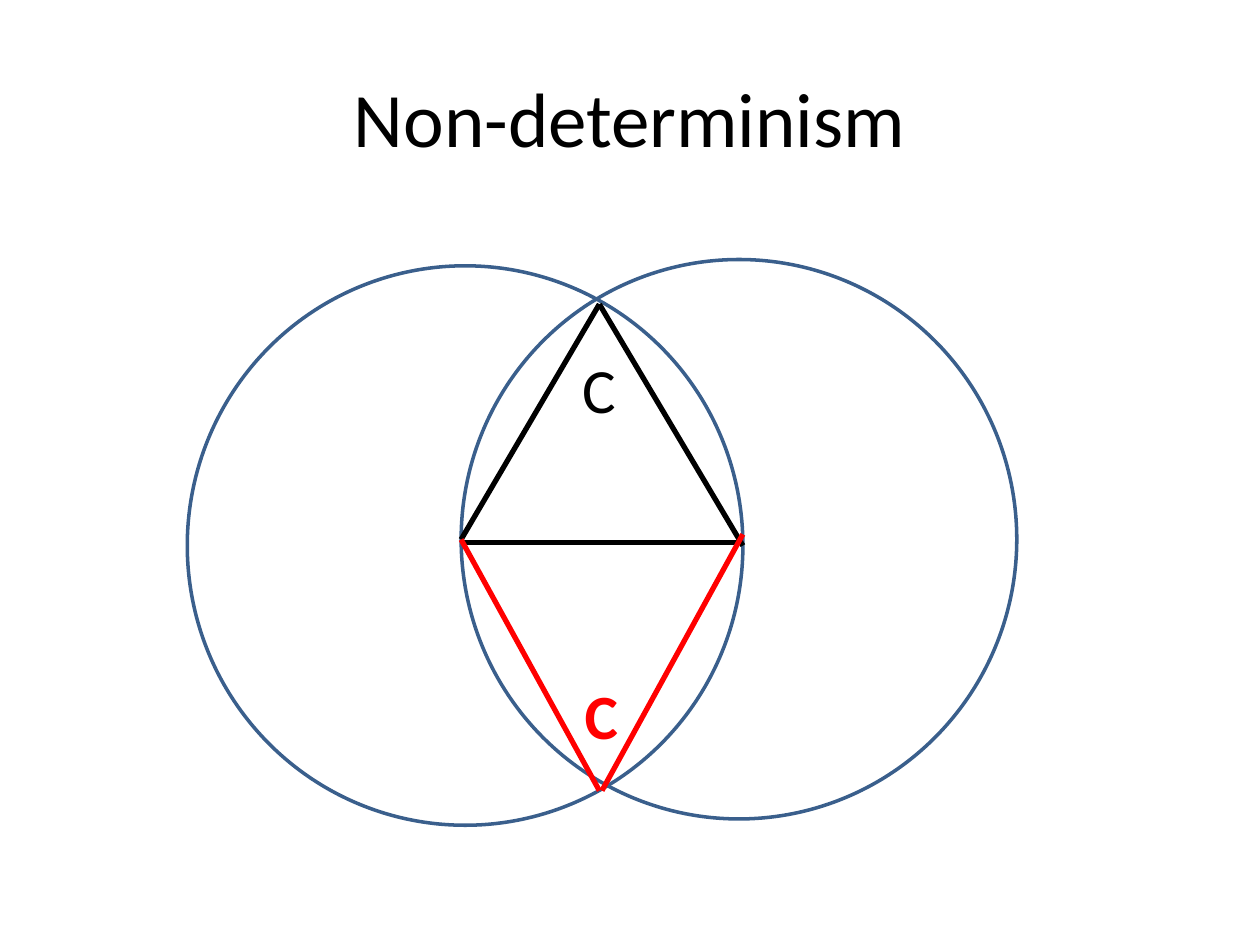
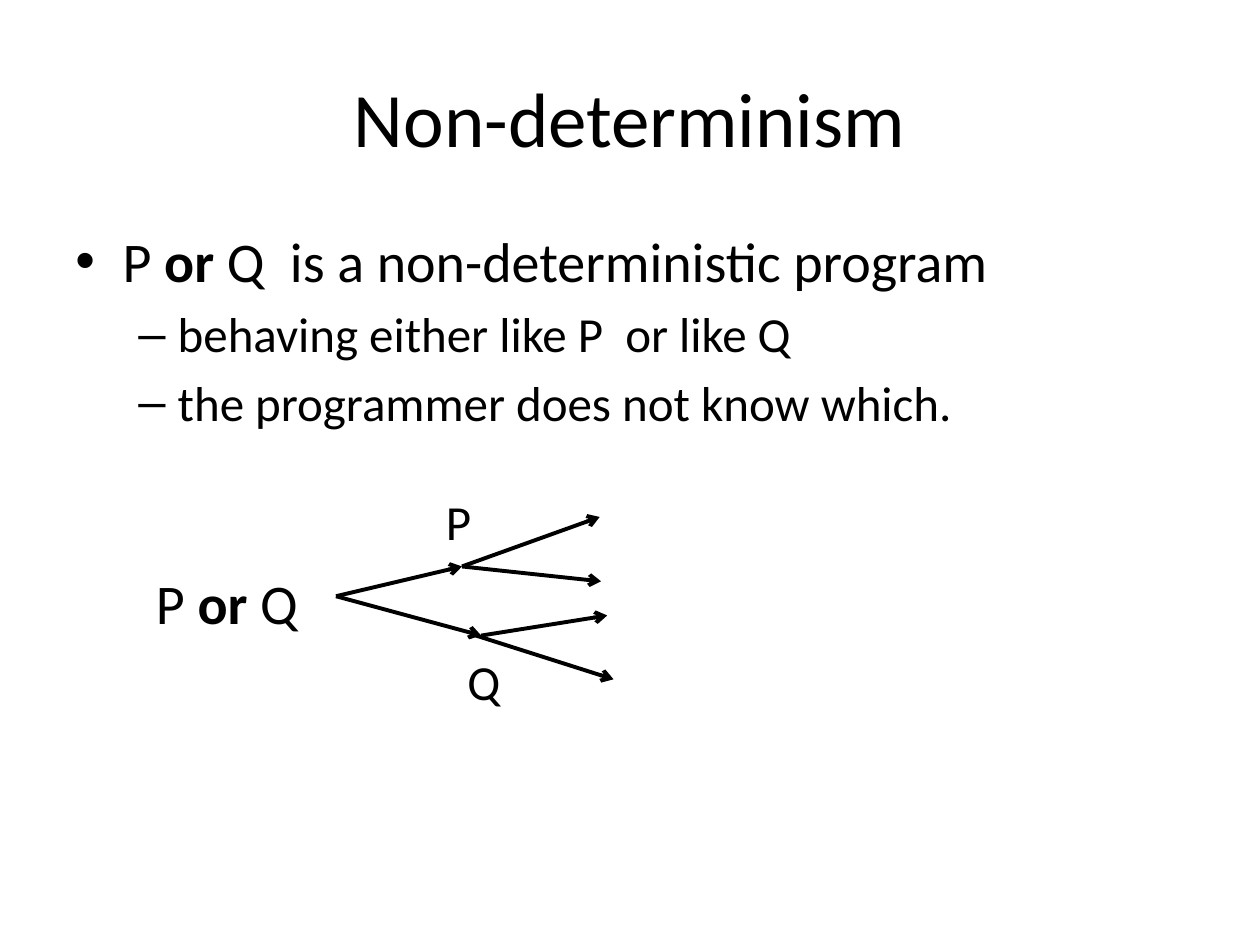
from lxml.etree import SubElement
from pptx import Presentation
from pptx.dml.color import RGBColor
from pptx.enum.shapes import MSO_CONNECTOR, MSO_SHAPE
from pptx.enum.text import MSO_ANCHOR, PP_ALIGN
from pptx.oxml.ns import qn
from pptx.util import Pt

FONT = "Calibri"
BLACK, RED, BLUE = "000000", "FF0000", "3A5F8C"
TITLE_ONLY = 5


def color(hex_string):
    return RGBColor.from_string(hex_string)


def style_paragraph(para, size, hex_color=BLACK, bold=None):
    para.font.name = FONT
    para.font.size = Pt(size)
    para.font.color.rgb = color(hex_color)
    para.font.bold = bold


def add_spans(para, spans):
    """Fill a paragraph with (text, bold) spans."""
    for text, bold in spans:
        span = para.add_run()
        span.text = text
        if bold:
            span.font.bold = True


def add_titled_page(deck, title):
    page = deck.slides.add_slide(deck.slide_layouts[TITLE_ONLY])
    box = page.shapes.title
    box.left, box.top, box.width, box.height = Pt(36), Pt(21.6), Pt(648), Pt(90)
    box.text_frame.text = title
    box.text_frame.vertical_anchor = MSO_ANCHOR.MIDDLE
    para = box.text_frame.paragraphs[0]
    para.alignment = PP_ALIGN.CENTER
    style_paragraph(para, 44)
    return page


def add_label(page, left, top, width, height, spans, size, hex_color=BLACK, bold=None):
    box = page.shapes.add_textbox(Pt(left), Pt(top), Pt(width), Pt(height))
    box.text_frame.word_wrap = False
    para = box.text_frame.paragraphs[0]
    style_paragraph(para, size, hex_color, bold)
    add_spans(para, spans)


def add_line(page, origin, start, end, width, hex_color=BLACK, arrow=False):
    """Draw a line between two points given relative to the origin."""
    left, top = origin
    line = page.shapes.add_connector(
        MSO_CONNECTOR.STRAIGHT,
        Pt(left + start[0]), Pt(top + start[1]), Pt(left + end[0]), Pt(top + end[1]))
    line.line.color.rgb = color(hex_color)
    line.line.width = Pt(width)
    if arrow:
        SubElement(line.line._get_or_add_ln(), qn("a:tailEnd"), type="arrow")
    SubElement(line._element.spPr, qn("a:effectLst"))


def add_circle(page, left, top, width, height):
    circle = page.shapes.add_shape(
        MSO_SHAPE.OVAL, Pt(left), Pt(top), Pt(width), Pt(height))
    circle.shadow.inherit = False
    circle.fill.background()
    circle.line.color.rgb = color(BLUE)
    circle.line.width = Pt(2)


def add_triangle_construction(page, left, top):
    """Two circles whose crossings give two possible triangles."""
    origin = (left, top)
    base_left, base_right = (156.5, 160), (317.5, 163.5)
    upper_apex, lower_apex = (235.5, 25.5), (235.5, 303.5)

    # Base and circles
    add_line(page, origin, (156.5, 161.5), (315.5, 161.5), 3)
    for across, down in ((156.5, 0), (0, 3.6)):
        add_circle(page, left + across, top + down, 317.5, 319.7)

    # Upper triangle
    add_label(page, left + 219, top + 48.5, 34, 51, [("C", False)], 36)
    add_line(page, origin, upper_apex, base_right, 3)
    add_line(page, origin, base_left, upper_apex, 3)

    # Lower triangle
    add_label(page, left + 220, top + 235, 34, 51, [("C", False)], 36, RED, True)
    add_line(page, origin, base_left, lower_apex, 3, RED)
    add_line(page, origin, (317.5, 157), (237, 303.5), 3, RED)


def add_bullets(page, left, top, width, height, items):
    """List (level, spans) items; each level has its own bullet and indent."""
    levels = [("•", 27, 27, 32), ("–", 58.5, 22.5, 28)]
    box = page.shapes.add_textbox(Pt(left), Pt(top), Pt(width), Pt(height))
    frame = box.text_frame
    frame.word_wrap = True
    for index, (level, spans) in enumerate(items):
        bullet, margin, hanging, size = levels[level]
        para = frame.add_paragraph() if index else frame.paragraphs[0]
        para.level = level
        para.space_before = Pt(size * 0.2)
        properties = para._p.get_or_add_pPr()
        properties.set("marL", str(Pt(margin)))
        properties.set("indent", str(-Pt(hanging)))
        SubElement(properties, qn("a:buFont"), typeface="Arial")
        SubElement(properties, qn("a:buChar"), char=bullet)
        style_paragraph(para, size)
        add_spans(para, spans)


def add_choice_tree(page, left, top):
    """P or Q branching into the outcomes of P and of Q."""
    root, p_node, q_node = (110, 63.5), (182, 46.5), (193, 86)
    arrows = [
        (root, p_node), (root, q_node),
        (p_node, (260.7, 18.2)), (q_node, (265, 74.5)),
        ((190, 86), (268.6, 111)), (p_node, (261.5, 55)),
    ]
    for start, end in arrows:
        add_line(page, (left, top), start, end, 2.25, arrow=True)

    add_label(page, left + 178, top + 91.5, 24.5, 41, [("Q", False)], 28)
    add_label(page, left + 165.7, top, 24.5, 41, [("P", False)], 28)
    add_label(page, left, top + 44, 96, 46,
              [("P ", False), ("or", True), (" Q", False)], 32)


def main():
    deck = Presentation()
    deck.slide_width, deck.slide_height = Pt(720), Pt(540)

    # Triangle construction
    page = add_titled_page(deck, "Non-determinism")
    add_triangle_construction(page, 107, 148.3)

    # Non-deterministic program
    page = add_titled_page(deck, "Non-determinism")
    add_bullets(page, 36, 126, 648, 356.4, [
        (0, [("P ", False), ("or", True),
             (" Q  is a non-deterministic program", False)]),
        (1, [("behaving either like P  or like Q", False)]),
        (1, [("the programmer does not know which.", False)]),
    ])
    add_choice_tree(page, 82, 277.2)

    deck.save("out.pptx")


if __name__ == "__main__":
    main()
